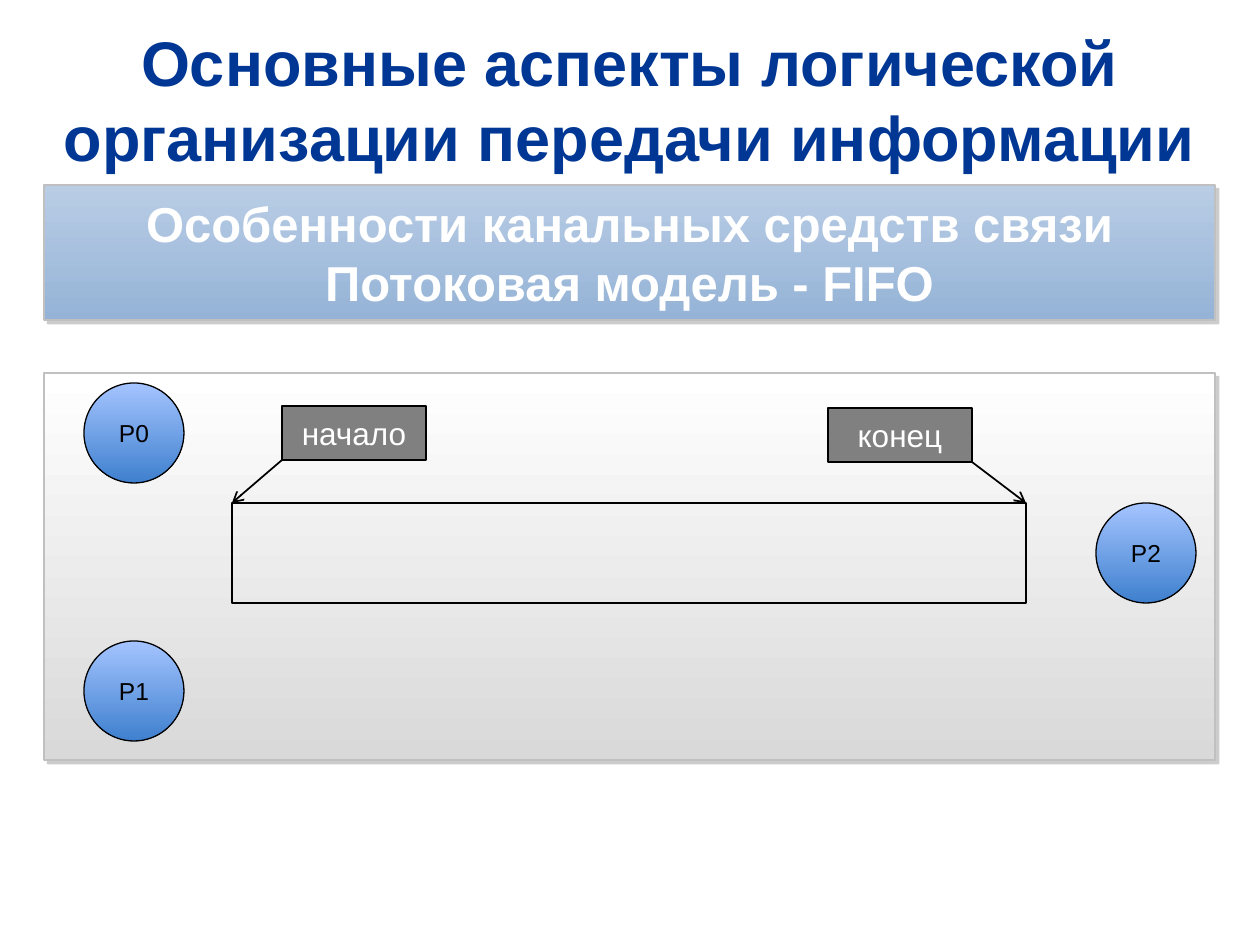
from dataclasses import dataclass

from lxml.etree import SubElement
from pptx import Presentation
from pptx.dml.color import RGBColor
from pptx.enum.shapes import MSO_CONNECTOR, MSO_SHAPE
from pptx.enum.text import MSO_ANCHOR, MSO_AUTO_SIZE, PP_ALIGN
from pptx.oxml.ns import qn
from pptx.util import Emu, Pt


@dataclass(frozen=True)
class Theme:
    font: str = "Arial"
    title: str = "003794"
    black: str = "000000"
    white: str = "FFFFFF"
    label: str = "808080"
    edge: str = "C0C0C0"
    shade: str = "808080"
    banner: tuple = ("B9CDE5", "95B3D7")
    panel: tuple = ("FFFFFF", "D9D9D9")
    process: tuple = ("A4C4FF", "3F80CE")
    title_size: int = 36
    banner_size: int = 28
    label_size: int = 18
    process_size: int = 14
    thin: float = 0.75
    line: float = 1


T = Theme()
PX_PER_INCH = 126


def px(n):
    return Emu(round(n * 914400 / PX_PER_INCH))


def rgb(value):
    return RGBColor.from_string(value)


def write(tf, lines, size, color, bold=False, wrap=True):
    tf.word_wrap = wrap
    tf.auto_size = MSO_AUTO_SIZE.NONE
    tf.vertical_anchor = MSO_ANCHOR.MIDDLE
    for i, line in enumerate(lines):
        p = tf.add_paragraph() if i else tf.paragraphs[0]
        p.alignment = PP_ALIGN.CENTER
        r = p.add_run()
        r.text = line
        r.font.name = T.font
        r.font.size = Pt(size)
        r.font.bold = bold
        r.font.color.rgb = rgb(color)


def add_box(s, kind, box, fill, edge, width):
    sp = s.shapes.add_shape(kind, *map(px, box))
    sp.shadow.inherit = False
    if fill is None:
        sp.fill.background()
    elif isinstance(fill, tuple):
        sp.fill.gradient()
        sp.fill.gradient_angle = 270
        for stop, color in zip(sp.fill.gradient_stops, fill):
            stop.color.rgb = rgb(color)
    else:
        sp.fill.solid()
        sp.fill.fore_color.rgb = rgb(fill)
    sp.line.color.rgb = rgb(edge)
    sp.line.width = Pt(width)
    return sp


def add_card(s, box, fill):
    sp = add_box(s, MSO_SHAPE.RECTANGLE, box, fill, T.edge, T.line)
    effects = sp._element.spPr.find(qn("a:effectLst"))
    shadow = SubElement(effects, qn("a:outerShdw"), blurRad="0", dist=str(Pt(3)),
                        dir="2700000", algn="tl", rotWithShape="0")
    color = SubElement(shadow, qn("a:srgbClr"), val=T.shade)
    SubElement(color, qn("a:alpha"), val="40000")
    return sp


def add_arrow(s, start, end):
    c = s.shapes.add_connector(MSO_CONNECTOR.STRAIGHT, *map(px, start + end))
    c.line.color.rgb = rgb(T.black)
    c.line.width = Pt(T.line)
    SubElement(c.line._get_or_add_ln(), qn("a:tailEnd"), type="arrow")
    SubElement(c._element.spPr, qn("a:effectLst"))


def add_title(s, box, text):
    sp = s.shapes.title
    sp.left, sp.top, sp.width, sp.height = map(px, box)
    write(sp.text_frame, [text], T.title_size, T.title, bold=True)


def add_banner(s, box, lines):
    tf = add_card(s, box, T.banner).text_frame
    tf.margin_left = tf.margin_right = px(30)
    tf.margin_top = tf.margin_bottom = px(5)
    write(tf, lines, T.banner_size, T.white, bold=True)


def add_process(s, x, y, name):
    sp = add_box(s, MSO_SHAPE.OVAL, (x, y, 100, 100), T.process, T.black, T.thin)
    write(sp.text_frame, [name], T.process_size, T.black, wrap=False)


def add_label(s, box, text):
    sp = add_box(s, MSO_SHAPE.RECTANGLE, box, T.label, T.black, T.thin)
    write(sp.text_frame, [text], T.label_size, T.white, wrap=False)


def add_queue_panel(s, box):
    left, top, width, height = box
    add_card(s, box, T.panel)

    queue_w, queue_h = 1000 - 200, 100
    queue_w = 794
    queue_x = left + (width - queue_w) // 2
    queue_y = top + 130
    add_box(s, MSO_SHAPE.RECTANGLE, (queue_x, queue_y, queue_w, queue_h),
            None, T.black, T.thin)

    for dx, dy, name in ((40, 10, "P0"), (40, 268, "P1"), (1052, 130, "P2")):
        add_process(s, left + dx, top + dy, name)

    label_w, label_h = 144, 54
    ends = ((238, 33, "начало", 0), (784, 35, "конец", 1))
    for dx, dy, text, side in ends:
        x, y = left + dx, top + dy
        add_label(s, (x, y, label_w, label_h), text)
        add_arrow(s, (x + side * label_w, y + label_h),
                  (queue_x + side * queue_w, queue_y))


def main():
    prs = Presentation()
    prs.slide_width, prs.slide_height = px(1260), px(945)
    s = prs.slides.add_slide(prs.slide_layouts[5])
    left, width = 44, 1171
    add_title(s, (left, 33, width, 132),
              "Основные аспекты логической организации передачи информации")
    add_banner(s, (left, 185, width, 135),
               ["Особенности канальных средств связи", "Потоковая модель - FIFO"])
    add_queue_panel(s, (left, 373, width, 387))
    prs.save("out.pptx")


if __name__ == "__main__":
    main()
